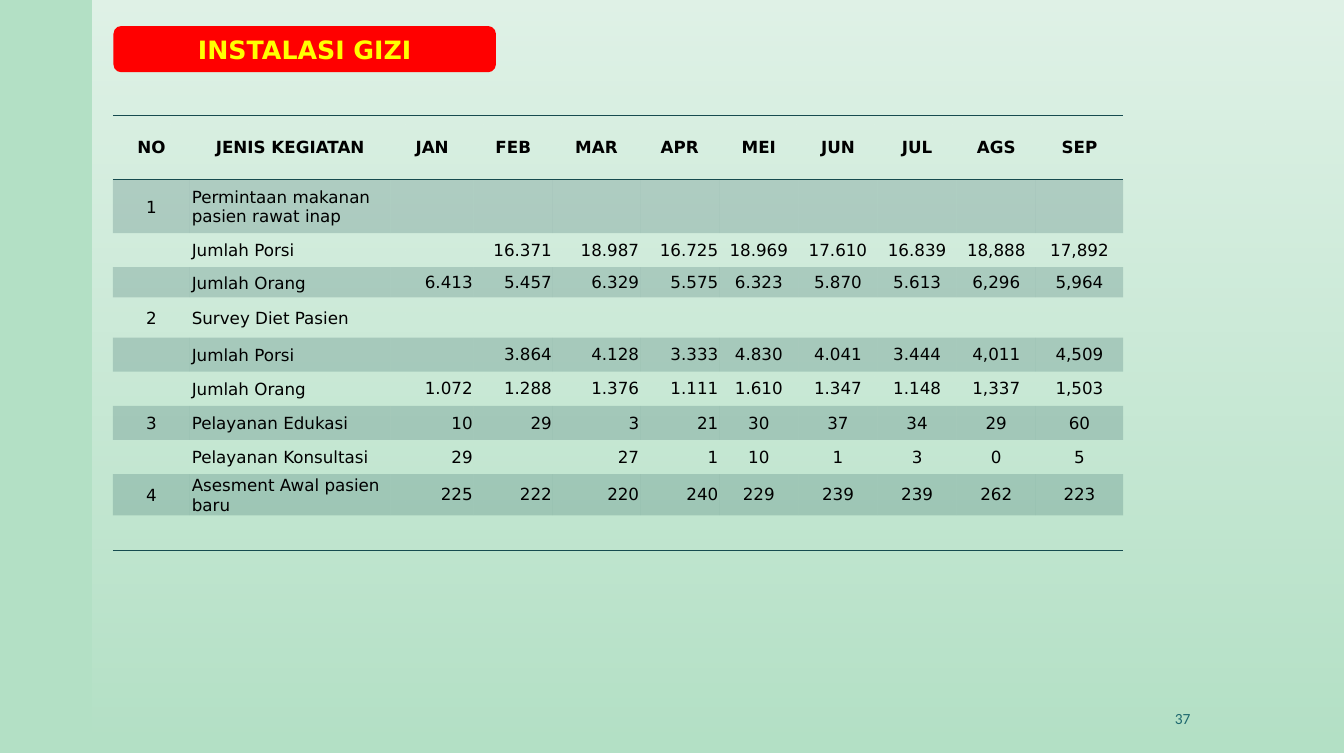
from dataclasses import dataclass

from lxml import etree
from pptx import Presentation
from pptx.dml.color import RGBColor
from pptx.enum.shapes import MSO_SHAPE
from pptx.enum.text import MSO_ANCHOR, MSO_AUTO_SIZE, PP_ALIGN
from pptx.oxml.ns import qn
from pptx.util import Pt

RECT = MSO_SHAPE.RECTANGLE
ROUND_RECT = MSO_SHAPE.ROUNDED_RECTANGLE
MIDDLE = MSO_ANCHOR.MIDDLE
NO_FIT = MSO_AUTO_SIZE.NONE
LEFT, CENTER, RIGHT = PP_ALIGN.LEFT, PP_ALIGN.CENTER, PP_ALIGN.RIGHT
TITLE_ONLY = 5
NO_STYLE = "{2D5ABB26-0587-4C30-8999-92F81FD0307C}"


@dataclass(frozen=True)
class Theme:
    background: str = "B3E0C5"
    panel: str = "FFFFFF"
    accent: str = "164B4F"
    text: str = "000000"
    banner: str = "FF0000"
    title: str = "FFFF00"
    number: str = "1F696F"
    font: str = "DejaVu Sans"
    number_font: str = "Calibri"
    title_size: float = 18.1
    table_size: float = 12
    number_size: float = 11.1


THEME = Theme()

BANNER_BOX = (81.4, 18.7, 274.3, 33.1)
COL_WIDTHS = [55.2, 144, 59.6, 56.8, 62.6] + [56.8] * 5 + [62.6]
ROW_HEIGHTS = [46, 38.4, 24.5, 21.6, 28.8] + [24.5] * 4 + [29.4, 25.4]
FIRST_CENTERED_MONTH = 6
ROWS = [
    ["NO", "JENIS KEGIATAN", "JAN", "FEB", "MAR", "APR", "MEI", "JUN", "JUL", "AGS", "SEP"],
    ["1", "Permintaan makanan pasien rawat inap"] + [""] * 9,
    ["", "Jumlah Porsi", "", "16.371", "18.987", "16.725", "18.969", "17.610", "16.839", "18,888", "17,892"],
    ["", "Jumlah Orang", "6.413", "5.457", "6.329", "5.575", "6.323", "5.870", "5.613", "6,296", "5,964"],
    ["2", "Survey Diet Pasien"] + [""] * 9,
    ["", "Jumlah Porsi", "", "3.864", "4.128", "3.333", "4.830", "4.041", "3.444", "4,011", "4,509"],
    ["", "Jumlah Orang", "1.072", "1.288", "1.376", "1.111", "1.610", "1.347", "1.148", "1,337", "1,503"],
    ["3", "Pelayanan Edukasi", "10", "29", "3", "21", "30", "37", "34", "29", "60"],
    ["", "Pelayanan Konsultasi", "29", "", "27", "1", "10", "1", "3", "0", "5"],
    ["4", "Asesment Awal pasien baru", "225", "222", "220", "240", "229", "239", "239", "262", "223"],
    [""] * 11,
]


def rgb(color):
    return RGBColor.from_string(color)


def set_alpha(color_element, percent):
    etree.SubElement(color_element, qn("a:alpha")).set("val", str(percent * 1000))


def write(tf, text, size, color, font=THEME.font, bold=False, align=CENTER):
    tf.text = text
    p = tf.paragraphs[0]
    p.alignment = align
    for r in p.runs:
        r.font.size = Pt(size)
        r.font.name = font
        r.font.bold = bold
        r.font.color.rgb = rgb(color)
    if not text:
        p._p.get_or_add_endParaRPr().set("sz", str(size * 100))


def add_block(slide, kind, box):
    sp = slide.shapes.add_shape(kind, *map(Pt, box))
    sp.shadow.inherit = False
    sp.line.fill.background()
    return sp


def add_panel(slide):
    sp = add_block(slide, RECT, (66.2, 0, 897.9, 540))
    sp.fill.gradient()
    sp.fill.gradient_angle = 270
    for stop, position in zip(sp.fill.gradient_stops, (0, 1)):
        stop.position = position
        stop.color.rgb = rgb(THEME.panel)
    for color, percent in zip(sp._element.spPr.iter(qn("a:srgbClr")), (60, 0)):
        set_alpha(color, percent)


def add_title(slide, text):
    sp = add_block(slide, ROUND_RECT, BANNER_BOX)
    sp.fill.solid()
    sp.fill.fore_color.rgb = rgb(THEME.banner)
    title = slide.shapes.title
    title.left, title.top, title.width, title.height = map(Pt, BANNER_BOX)
    tf = title.text_frame
    tf.vertical_anchor = MIDDLE
    tf.auto_size = NO_FIT
    write(tf, text, THEME.title_size, THEME.title, bold=True)
    sp._element.addnext(title._element)


def add_border(cell, side, index):
    ln = etree.Element(qn(f"a:{side}"), w=str(Pt(1)))
    fill = etree.SubElement(ln, qn("a:solidFill"))
    etree.SubElement(fill, qn("a:srgbClr")).set("val", THEME.accent)
    cell._tc.get_or_add_tcPr().insert(index, ln)


def set_margins(cell, side, top, bottom):
    cell.margin_left = cell.margin_right = Pt(side)
    cell.margin_top, cell.margin_bottom = Pt(top), Pt(bottom)


def alignment(row, col):
    if row == 0 or col == 0 or col >= FIRST_CENTERED_MONTH:
        return CENTER
    return LEFT if col == 1 else RIGHT


def fill_cell(cell, row, col, text):
    header = row == 0
    write(cell.text_frame, text, THEME.table_size, THEME.text,
          bold=header, align=alignment(row, col))
    cell.vertical_anchor = MIDDLE
    if header:
        set_margins(cell, 14.4, 5.8, 5.8)
    else:
        inset = 1.4 if col < 2 else 0.7
        set_margins(cell, inset, inset, 0)
    if row % 2:
        cell.fill.solid()
        cell.fill.fore_color.rgb = rgb(THEME.accent)
        set_alpha(next(cell._tc.tcPr.iter(qn("a:srgbClr"))), 20)
    else:
        cell.fill.background()
    if header:
        add_border(cell, "lnT", 0)
        add_border(cell, "lnB", 1)
    elif row == len(ROWS) - 1:
        add_border(cell, "lnB", 0)


def add_activity_table(slide):
    table = slide.shapes.add_table(
        len(ROWS), len(COL_WIDTHS), Pt(81), Pt(82.8),
        Pt(sum(COL_WIDTHS)), Pt(sum(ROW_HEIGHTS))).table
    table.first_row = table.horz_banding = False
    table._tbl.tblPr.find(qn("a:tableStyleId")).text = NO_STYLE
    for column, width in zip(table.columns, COL_WIDTHS):
        column.width = Pt(width)
    for row, (height, texts) in enumerate(zip(ROW_HEIGHTS, ROWS)):
        table.rows[row].height = Pt(height)
        for col, text in enumerate(texts):
            fill_cell(table.cell(row, col), row, col, text)


def add_page_number(slide, text):
    tf = slide.shapes.add_textbox(Pt(636.5), Pt(500.4), Pt(224.6), Pt(28.8)).text_frame
    tf.word_wrap = True
    tf.vertical_anchor = MIDDLE
    write(tf, text, THEME.number_size, THEME.number, THEME.number_font, align=RIGHT)


def main():
    prs = Presentation()
    prs.slide_width, prs.slide_height = Pt(964.1), Pt(540)
    slide = prs.slides.add_slide(prs.slide_layouts[TITLE_ONLY])
    slide.background.fill.solid()
    slide.background.fill.fore_color.rgb = rgb(THEME.background)
    add_panel(slide)
    add_activity_table(slide)
    add_page_number(slide, "37")
    add_title(slide, "INSTALASI GIZI")
    prs.save("out.pptx")


if __name__ == "__main__":
    main()
